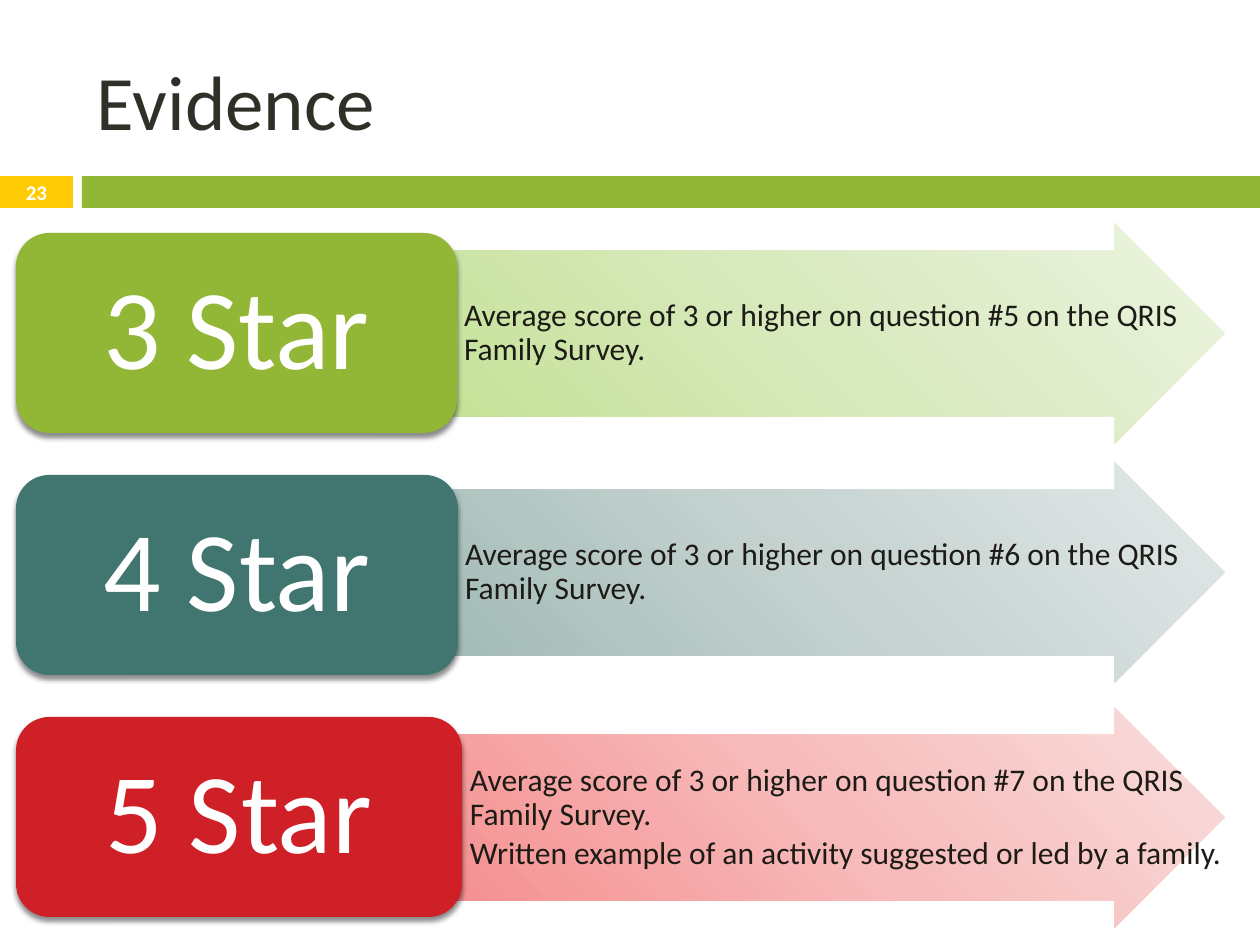
from lxml import etree
from pptx import Presentation, util as u
from pptx.dml.color import RGBColor
from pptx.enum import shapes, text
from pptx.oxml.ns import nsdecls

TITLE = "Evidence"
PAGE_NUMBER = "23"
LEVELS = [
    dict(label="3 Star", color="92B635", tints=("C4E195", "D9EABF", "ECF4E0"),
         card_width=441, arrow_left=439, arrow_top=223,
         evidence=["Average score of 3 or higher on question #5 on the QRIS Family Survey."]),
    dict(label="4 Star", color="40766F", tints=("A0B9B5", "C6D3D1", "E3E9E8"),
         card_width=442, arrow_left=440, arrow_top=462,
         evidence=["Average score of 3 or higher on question #6 on the QRIS Family Survey."]),
    dict(label="5 Star", color="D02027", tints=("F58D8E", "F7BBBB", "FADEDE"),
         card_width=446, arrow_left=445, arrow_top=707,
         evidence=["Average score of 3 or higher on question #7 on the QRIS Family Survey.",
                   "Written example of an activity suggested or led by a family."]),
]
THEME = dict(
    font="Calibri", accent="FFCB05", band="92B635",
    title=dict(size=44, color="303029"),
    number=dict(size=11.9, color="FFFFFF", bold=True),
    label=dict(size=65, color="FFFFFF"),
    evidence=dict(size=18, color="1D1B16"),
)
CARD_LEFT, CARD_TOP, CARD_HEIGHT, CARD_PITCH = 16, 233, 200, 242
ARROW_RIGHT, ARROW_HEIGHT = 1225, 221
BAND_TOP, BAND_HEIGHT = 176, 32
LEFT, CENTER = text.PP_ALIGN.LEFT, text.PP_ALIGN.CENTER


def px(length):
    return u.Emu(round(length * 914400 / 126))


def box(*area):
    return [px(length) for length in area]


def write(shape, lines, style, align=LEFT, insets=(0, 0, 0, 0), **spacing):
    frame = shape.text_frame
    left, top, right, bottom = box(*insets)
    settings = dict(word_wrap=True, vertical_anchor=text.MSO_ANCHOR.MIDDLE,
                    margin_left=left, margin_top=top,
                    margin_right=right, margin_bottom=bottom)
    for name, value in settings.items():
        setattr(frame, name, value)
    for index, line in enumerate(lines):
        paragraph = frame.add_paragraph() if index else frame.paragraphs[0]
        for name, value in dict(alignment=align, **spacing).items():
            setattr(paragraph, name, value)
        run = paragraph.add_run()
        run.text = line
        font = dict(name=THEME["font"], size=u.Pt(style["size"]),
                    bold=style.get("bold", False))
        for name, value in font.items():
            setattr(run.font, name, value)
        run.font.color.rgb = RGBColor.from_string(style["color"])


def draw(slide, kind, area, color):
    shape = slide.shapes.add_shape(kind, *box(*area))
    shape.shadow.inherit = False
    shape.fill.solid()
    shape.fill.fore_color.rgb = RGBColor.from_string(color)
    shape.line.fill.background()
    return shape


def add_gradient(shape, tints):
    stops = "".join(f'<a:gs pos="{index * 50000}"><a:srgbClr val="{tint}"/></a:gs>'
                    for index, tint in enumerate(tints))
    gradient = etree.fromstring(
        f'<a:gradFill {nsdecls("a")} rotWithShape="1"><a:gsLst>{stops}</a:gsLst>'
        '<a:path path="circle"><a:fillToRect t="100000" r="100000"/></a:path></a:gradFill>')
    properties = shape.element.spPr
    properties.replace(properties.find("{*}solidFill"), gradient)


def add_shadow(shape):
    shape.element.spPr.find("{*}effectLst").append(etree.fromstring(
        f'<a:outerShdw {nsdecls("a")} blurRad="{u.Pt(3)}" dist="{u.Pt(2.4)}" '
        'dir="5400000" rotWithShape="0"><a:srgbClr val="000000">'
        '<a:alpha val="45000"/></a:srgbClr></a:outerShdw>'))


def add_level(slide, index, level):
    arrow_area = (level["arrow_left"], level["arrow_top"],
                  ARROW_RIGHT - level["arrow_left"], ARROW_HEIGHT)
    arrow = draw(slide, shapes.MSO_SHAPE.RIGHT_ARROW, arrow_area, level["color"])
    arrow.adjustments[0] = 0.75
    add_gradient(arrow, level["tints"])
    evidence = slide.shapes.add_textbox(*box(*arrow_area))
    write(evidence, level["evidence"], THEME["evidence"], insets=(25, 1, 1, 1),
          line_spacing=0.9, space_after=u.Pt(2.7))

    card_area = (CARD_LEFT, CARD_TOP + index * CARD_PITCH, level["card_width"], CARD_HEIGHT)
    card = draw(slide, shapes.MSO_SHAPE.ROUNDED_RECTANGLE, card_area, level["color"])
    add_shadow(card)
    write(card, [level["label"]], THEME["label"], CENTER, line_spacing=0.9)


def main():
    deck = Presentation()
    deck.slide_width, deck.slide_height = box(1260, 945)
    slide = deck.slides.add_slide(deck.slide_layouts[6])

    number_tab = draw(slide, shapes.MSO_SHAPE.RECTANGLE,
                      (0, BAND_TOP, 73, BAND_HEIGHT), THEME["accent"])
    write(number_tab, [PAGE_NUMBER], THEME["number"], CENTER)
    draw(slide, shapes.MSO_SHAPE.RECTANGLE,
         (82, BAND_TOP, 1178, BAND_HEIGHT), THEME["band"])
    for index, level in enumerate(LEVELS):
        add_level(slide, index, level)
    title = slide.shapes.add_textbox(*box(84, 32, 1124, 136))
    write(title, [TITLE], THEME["title"], insets=(13, 6, 13, 6))
    deck.save("out.pptx")


if __name__ == "__main__":
    main()
